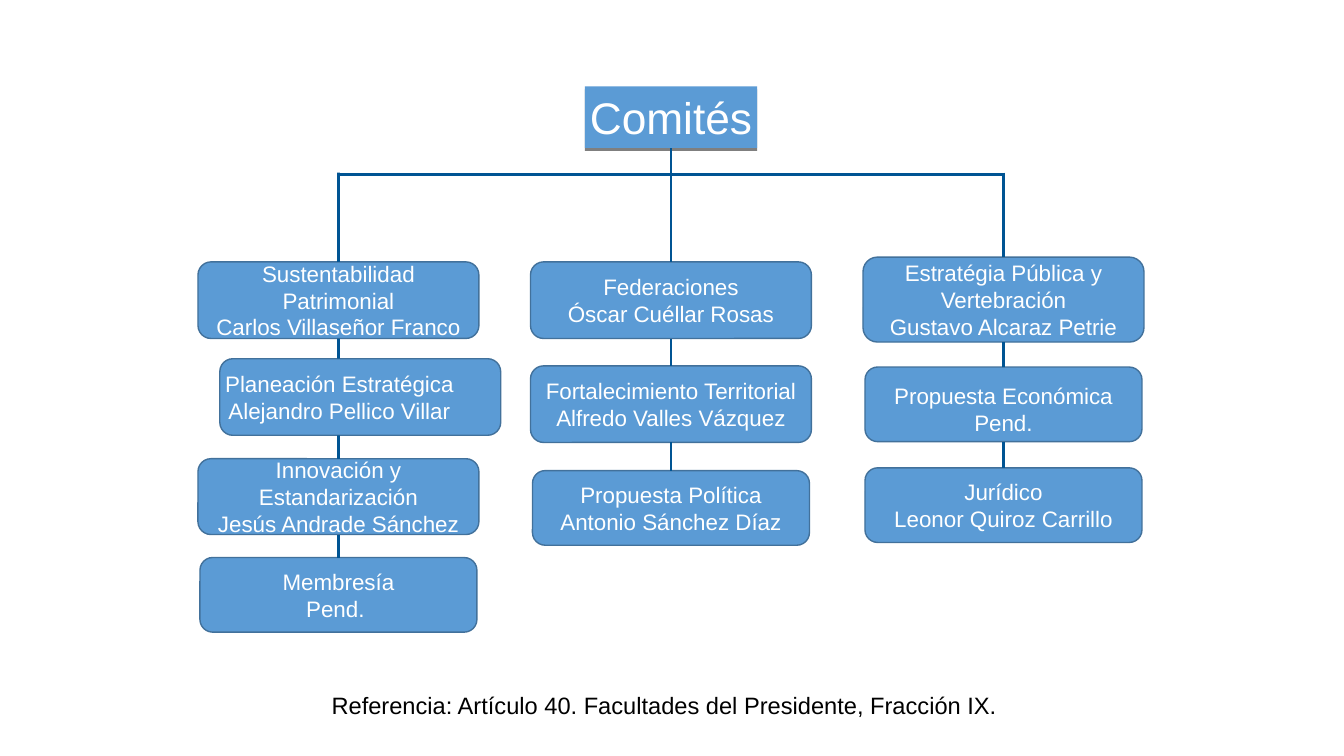
from lxml import etree
from pptx import Presentation
from pptx.dml.color import RGBColor
from pptx.enum.shapes import MSO_CONNECTOR, MSO_SHAPE
from pptx.enum.text import MSO_ANCHOR, PP_ALIGN
from pptx.oxml import parse_xml
from pptx.oxml.ns import nsdecls, qn
from pptx.util import Cm, Emu, Pt

BLUE = RGBColor(0x5B, 0x9B, 0xD5)
BORDER = RGBColor(0x42, 0x71, 0x9B)
LINE = RGBColor(0x00, 0x54, 0x93)
WHITE = RGBColor(0xFF, 0xFF, 0xFF)
BLACK = RGBColor(0x00, 0x00, 0x00)

TOP, BOTTOM = 0, 2  # connection sites of a rectangle
MIDDLE = 16.91  # centre of the chart, in cm
COLUMN_STEP = 8.38
BAR_TOP = 4.39
WIDE, NARROW = 7.08, 6.98

# Each committee: lines of text, top, width, height
COLUMNS = [
    [
        (["Sustentabilidad Patrimonial", "Carlos Villaseñor Franco"], 6.6, WIDE, 1.93),
        (["Planeación Estratégica", "Alejandro Pellico Villar"], 9.04, WIDE, 1.93),
        (["Innovación y Estandarización", "Jesús Andrade Sánchez"], 11.56, WIDE, 1.91),
        (["Membresía", "Pend. "], 14.05, NARROW, 1.88),
    ],
    [
        (["Federaciones", "Óscar Cuéllar Rosas"], 6.6, WIDE, 1.93),
        (["Fortalecimiento Territorial", "Alfredo Valles Vázquez"], 9.22, WIDE, 1.93),
        (["Propuesta Política", "Antonio Sánchez Díaz"], 11.86, NARROW, 1.88),
    ],
    [
        (["Estratégia Pública y Vertebración", "Gustavo Alcaraz Petrie"], 6.48, WIDE, 2.14),
        (["Propuesta Económica", "Pend."], 9.25, NARROW, 1.88),
        (["Jurídico", "Leonor Quiroz Carrillo"], 11.79, NARROW, 1.88),
    ],
]


def write_text(shape, lines, size, color, wrap=True):
    frame = shape.text_frame
    frame.word_wrap = wrap
    frame.vertical_anchor = MSO_ANCHOR.MIDDLE
    frame.margin_left = frame.margin_right = Cm(0.12)
    frame.margin_top = frame.margin_bottom = Cm(0.1)
    frame.text = "\n".join(lines)
    for paragraph in frame.paragraphs:
        paragraph.alignment = PP_ALIGN.CENTER
        paragraph.font.name = "Arial"
        paragraph.font.size = Pt(size)
        paragraph.font.color.rgb = color


def add_title(slide):
    width = 4.34
    shape = slide.shapes.add_shape(
        MSO_SHAPE.RECTANGLE, Cm(MIDDLE - width / 2), Cm(2.18), Cm(width), Cm(1.55))
    shape.fill.solid()
    shape.fill.fore_color.rgb = BLUE
    shape.line.fill.background()
    shape._element.spPr.append(parse_xml(
        f'<a:effectLst {nsdecls("a")}>'
        f'<a:outerShdw dist="{int(Pt(2))}" dir="5400000" rotWithShape="0">'
        '<a:srgbClr val="000000"><a:alpha val="50000"/></a:srgbClr>'
        '</a:outerShdw></a:effectLst>'))
    write_text(shape, ["Comités"], 31.6, WHITE, wrap=False)
    return shape


def add_committee(slide, center, lines, top, width, height):
    shape = slide.shapes.add_shape(
        MSO_SHAPE.ROUNDED_RECTANGLE,
        Cm(center - width / 2), Cm(top), Cm(width), Cm(height))
    shape.adjustments[0] = 0.17
    shape.shadow.inherit = False
    shape.fill.solid()
    shape.fill.fore_color.rgb = BLUE
    shape.line.color.rgb = BORDER
    shape.line.width = Pt(1)
    write_text(shape, lines, 16, WHITE)
    return shape


def add_line(slide, x1, y1, x2, y2, begin=None, end=None):
    connector = slide.shapes.add_connector(
        MSO_CONNECTOR.STRAIGHT, Cm(x1), Cm(y1), Cm(x2), Cm(y2))
    connector.line.color.rgb = LINE
    connector.line.width = Pt(2)
    etree.SubElement(connector._element.spPr, qn("a:effectLst"))
    if begin is not None:
        connector.begin_connect(begin, BOTTOM)
    if end is not None:
        connector.end_connect(end, TOP)


def main():
    presentation = Presentation()
    presentation.slide_width = Cm(33.87)
    presentation.slide_height = Cm(19.05)
    slide = presentation.slides.add_slide(presentation.slide_layouts[6])

    # Boxes
    title = add_title(slide)
    centers = [MIDDLE + COLUMN_STEP * side for side in (-1, 0, 1)]
    columns = [[add_committee(slide, center, *committee) for committee in column]
               for center, column in zip(centers, COLUMNS)]

    # Planning stands to the right, with its text on the column's axis
    planning = columns[0][1]
    planning.left += Cm(0.55)
    planning.text_frame.margin_left = 0
    planning.text_frame.margin_right = Cm(1.05)
    economy = columns[2][1]
    economy.text_frame.margin_top = Cm(0.33)

    # Links between neighbours of a column
    for center, column in zip(centers, columns):
        for upper, lower in zip(column, column[1:]):
            bottom = Emu(upper.top + upper.height)
            add_line(slide, center, bottom.cm, center, Emu(lower.top).cm,
                     None if upper is planning else upper,
                     None if lower is planning else lower)

    # Trunk, crossbar and side branches
    left, middle, right = (column[0] for column in columns)
    add_line(slide, MIDDLE, 3.73, MIDDLE, 6.6, title, middle)
    add_line(slide, centers[0], BAR_TOP, centers[2], BAR_TOP)
    add_line(slide, centers[0], BAR_TOP - 0.04, centers[0], 6.6, end=left)
    add_line(slide, centers[2], BAR_TOP - 0.04, centers[2], 6.48, end=right)

    # Reference
    reference = slide.shapes.add_textbox(Cm(8.05), Cm(17.3), Cm(17.4), Cm(0.91))
    write_text(reference,
               ["Referencia: Artículo 40. Facultades del Presidente, Fracción IX."],
               16.9, BLACK, wrap=False)

    presentation.save("out.pptx")


if __name__ == "__main__":
    main()
